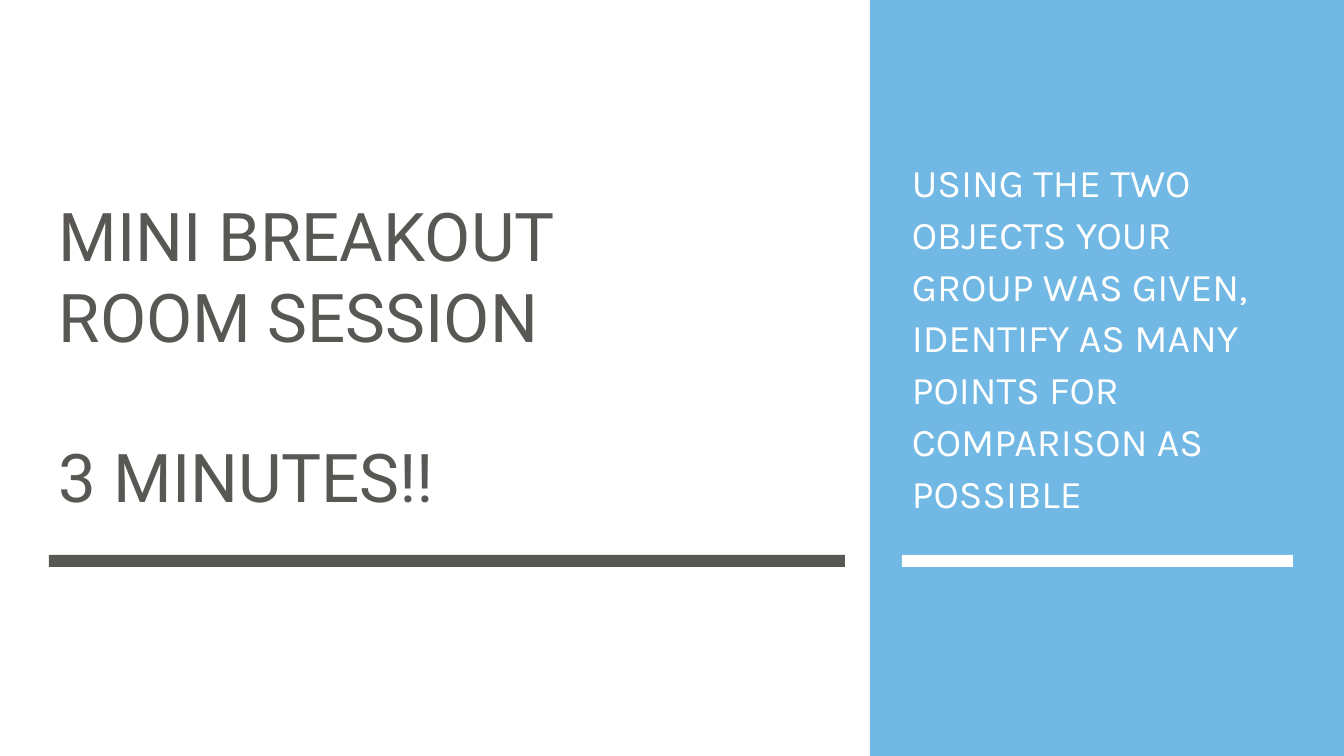
import pptx
import pptx.dml.color
import pptx.enum.shapes
import pptx.enum.text
import pptx.util

# Content
COLORS = {"white": "FFFFFF", "charcoal": "585753", "sky": "71B9E4"}
WIDTH, HEIGHT = 1344, 756
TEXT_TOP, TEXT_HEIGHT = 113, 408
BAR_TOP, BAR_HEIGHT = 555, 12
LEFT, RIGHT, PANEL_LEFT = 49, 902, 870
TITLE_WIDTH, BODY_WIDTH = 790, 391

# left, top, width, height, color
BLOCKS = [
    (0, 0, WIDTH, HEIGHT, "white"),
    (LEFT, BAR_TOP, 796, BAR_HEIGHT, "charcoal"),
    (PANEL_LEFT, 0, WIDTH - PANEL_LEFT, HEIGHT, "sky"),
    (RIGHT, BAR_TOP, BODY_WIDTH, BAR_HEIGHT, "white"),
]

# left, width, font, size, color, line spacing, space before, paragraphs
# (\v is a line break)
TEXTS = [
    (LEFT, TITLE_WIDTH, "Roboto", 48, "charcoal", 1.0, 57,
     ["MINI BREAKOUT\vROOM SESSION", "3 MINUTES!!"]),
    (RIGHT, BODY_WIDTH, "Karla", 28, "white", 1.1, 0,
     ["USING THE TWO OBJECTS YOUR GROUP WAS GIVEN, IDENTIFY AS MANY "
      "POINTS FOR COMPARISON AS POSSIBLE"]),
]

EMU_PER_PX = 12192000 / WIDTH


def px(*lengths):
    return [pptx.util.Emu(round(length * EMU_PER_PX)) for length in lengths]


def rgb(name):
    return pptx.dml.color.RGBColor.from_string(COLORS[name])


def add_block(page, left, top, width, height, color):
    block = page.shapes.add_shape(
        pptx.enum.shapes.MSO_SHAPE.RECTANGLE, *px(left, top, width, height))
    block.shadow.inherit = False
    block.fill.solid()
    block.fill.fore_color.rgb = rgb(color)
    block.line.fill.background()


def add_text(page, left, width, font, size, color, spacing, before, paragraphs):
    box = page.shapes.add_textbox(*px(left, TEXT_TOP, width, TEXT_HEIGHT))
    frame = box.text_frame
    frame.word_wrap = True
    frame.vertical_anchor = pptx.enum.text.MSO_ANCHOR.BOTTOM
    frame.text = "\n".join(paragraphs)
    for index, para in enumerate(frame.paragraphs):
        para.line_spacing = spacing
        para.space_before = pptx.util.Pt(before if index else 0)
        for span in para.runs:
            span.font.name = font
            span.font.size = pptx.util.Pt(size)
            span.font.color.rgb = rgb(color)


def main():
    deck = pptx.Presentation()
    deck.slide_width, deck.slide_height = px(WIDTH, HEIGHT)
    page = deck.slides.add_slide(deck.slide_layouts[6])

    # Background, side panel and bars
    for block in BLOCKS:
        add_block(page, *block)

    # Title and instructions
    for text in TEXTS:
        add_text(page, *text)

    deck.save("out.pptx")


if __name__ == "__main__":
    main()
